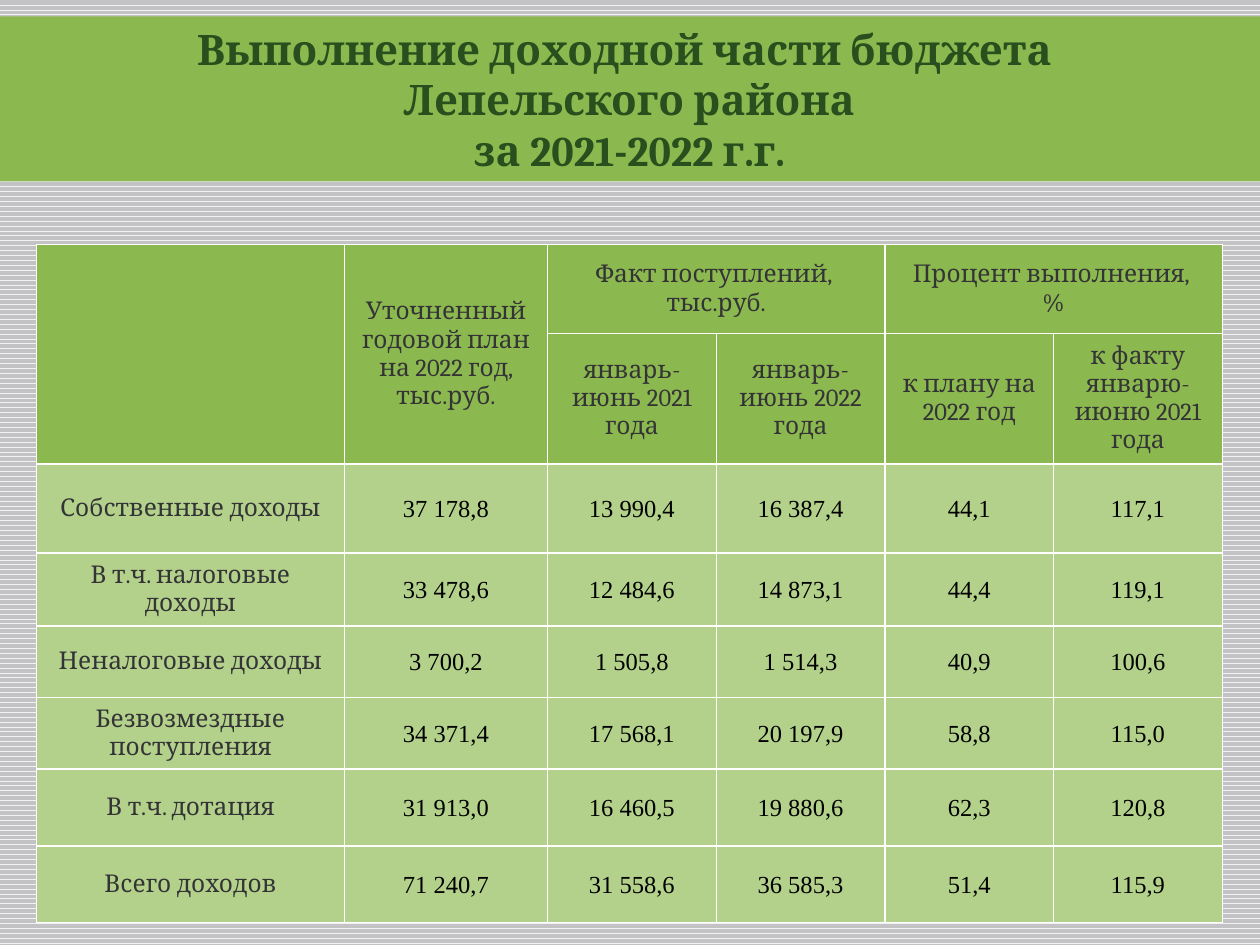
from dataclasses import dataclass

from lxml.etree import SubElement
from pptx import Presentation
from pptx.dml.color import RGBColor
from pptx.enum.dml import MSO_PATTERN
from pptx.enum.shapes import MSO_SHAPE
from pptx.enum.text import MSO_ANCHOR, PP_ALIGN
from pptx.oxml.ns import qn
from pptx.util import Cm, Pt


@dataclass(frozen=True)
class Theme:
    stripe: str = "F2F2F2"
    backdrop: str = "C3C2C5"
    header: str = "8CB94F"
    body: str = "B3D18B"
    border: str = "FFFFFF"
    title_text: str = "284F1D"
    label_text: str = "343436"
    value_text: str = "000000"
    label_font: str = "Cambria"
    value_font: str = "Times New Roman"
    title_size: int = 24
    table_size: int = 14


theme = Theme()


def write_text(frame, text, *, font, size, color, bold=False):
    """Write one centred paragraph per line of text."""
    frame.word_wrap = True
    for index, line in enumerate(text.split("\n")):
        para = frame.paragraphs[0] if index == 0 else frame.add_paragraph()
        para.alignment = PP_ALIGN.CENTER
        span = para.add_run()
        span.text = line
        span.font.name = font
        span.font.size = Pt(size)
        span.font.bold = bold
        span.font.color.rgb = RGBColor.from_string(color)


def style_cell(cell, fill):
    """Give a cell its borders, fill and vertical centring."""
    properties = cell._tc.get_or_add_tcPr()
    for side in ("lnL", "lnR", "lnT", "lnB"):
        line = SubElement(properties, qn(f"a:{side}"), w=str(Pt(1)))
        solid = SubElement(line, qn("a:solidFill"))
        SubElement(solid, qn("a:srgbClr"), val=theme.border)
    cell.fill.solid()
    cell.fill.fore_color.rgb = RGBColor.from_string(fill)
    cell.vertical_anchor = MSO_ANCHOR.MIDDLE


deck = Presentation()
deck.slide_width, deck.slide_height = Cm(25.4), Cm(19.05)
page = deck.slides.add_slide(deck.slide_layouts[6])

# Background
backdrop = page.background.fill
backdrop.patterned()
backdrop.pattern = MSO_PATTERN.WAVE
backdrop.fore_color.rgb = RGBColor.from_string(theme.stripe)
backdrop.back_color.rgb = RGBColor.from_string(theme.backdrop)

# Title band
band = page.shapes.add_shape(MSO_SHAPE.RECTANGLE, Cm(-0.03), Cm(0.33), Cm(25.43), Cm(3.33))
band.shadow.inherit = False
band.fill.solid()
band.fill.fore_color.rgb = RGBColor.from_string(theme.header)
band.line.fill.background()
write_text(
    band.text_frame,
    "Выполнение доходной части бюджета \nЛепельского района\nза 2021-2022 г.г.",
    font=theme.label_font, size=theme.title_size, color=theme.title_text, bold=True,
)

# Table grid
column_widths = [6.2, 4.1] + [3.4] * 4
row_heights = [1.79, 2.63, 1.8, 1.47, 1.44, 1.44, 1.55, 1.55]
table = page.shapes.add_table(
    len(row_heights), len(column_widths),
    Cm(0.74), Cm(4.93), Cm(sum(column_widths)), Cm(sum(row_heights)),
).table
table.first_row = table.horz_banding = False
for column, width in zip(table.columns, column_widths):
    column.width = Cm(width)
for row, height in zip(table.rows, row_heights):
    row.height = Cm(height)

# Table contents: two header rows, then income rows
contents = [
    ["", "Уточненный годовой план на 2022 год, тыс.руб.",
     "Факт поступлений, \nтыс.руб.", "", "Процент выполнения, \n%", ""],
    ["", "", "январь-июнь 2021 года", "январь-июнь 2022 года",
     "к плану на 2022 год", "к факту январю-июню 2021 года"],
    ["Собственные доходы", "37 178,8", "13 990,4", "16 387,4", "44,1", "117,1"],
    ["В т.ч. налоговые доходы", "33 478,6", "12 484,6", "14 873,1", "44,4", "119,1"],
    ["Неналоговые доходы", "3 700,2", "1 505,8", "1 514,3", "40,9", "100,6"],
    ["Безвозмездные поступления", "34 371,4", "17 568,1", "20 197,9", "58,8", "115,0"],
    ["В т.ч. дотация", "31 913,0", "16 460,5", "19 880,6", "62,3", "120,8"],
    ["Всего доходов", "71 240,7", "31 558,6", "36 585,3", "51,4", "115,9"],
]
for row_index, texts in enumerate(contents):
    is_header = row_index < 2
    for column_index, text in enumerate(texts):
        cell = table.cell(row_index, column_index)
        style_cell(cell, theme.header if is_header else theme.body)
        is_value = not is_header and column_index > 0
        if is_value:
            cell.margin_left = cell.margin_right = cell.margin_top = Cm(0.03)
            cell.margin_bottom = 0
        if text:
            write_text(
                cell.text_frame, text, size=theme.table_size,
                font=theme.value_font if is_value else theme.label_font,
                color=theme.value_text if is_value else theme.label_text,
            )

# Header merges: two tall cells, two wide cells
for column_index in (0, 1):
    table.cell(0, column_index).merge(table.cell(1, column_index))
for column_index in (2, 4):
    table.cell(0, column_index).merge(table.cell(0, column_index + 1))

deck.save("out.pptx")
